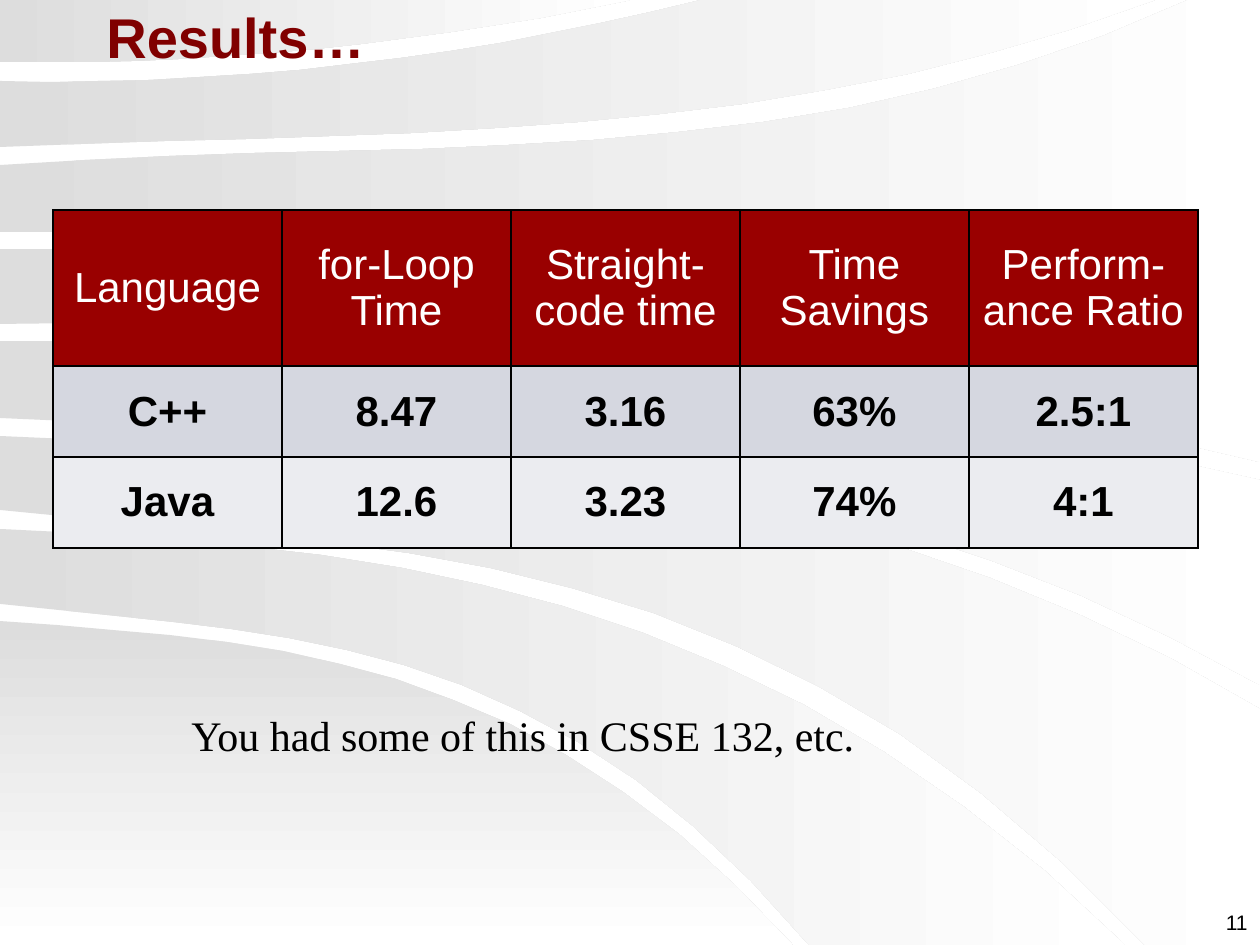
from math import prod
from typing import NamedTuple

from lxml import etree
from pptx import Presentation
from pptx.dml.color import RGBColor
from pptx.enum.text import MSO_ANCHOR, MSO_AUTO_SIZE, PP_ALIGN
from pptx.oxml.ns import qn
from pptx.util import Pt

PX = 914400 / 126
WIDE, HIGH = 1260, 945
STEPS = 14

GREY = RGBColor(0xDD, 0xDD, 0xDD)
WHITE = RGBColor(0xFF, 0xFF, 0xFF)
BLACK = RGBColor(0, 0, 0)
MAROON = RGBColor(0x80, 0, 0)
RED = RGBColor(0x99, 0, 0)
MIST = RGBColor(0xD5, 0xD7, 0xE0)
PALE = RGBColor(0xEB, 0xEC, 0xF0)

LEFT, MID, RIGHT = PP_ALIGN.LEFT, PP_ALIGN.CENTER, PP_ALIGN.RIGHT
TOP, CENTRE, BOTTOM = MSO_ANCHOR.TOP, MSO_ANCHOR.MIDDLE, MSO_ANCHOR.BOTTOM
FIT = MSO_AUTO_SIZE.SHAPE_TO_FIT_TEXT

Edge = list[tuple[int, int]]


class Band(NamedTuple):
    """Grey sweep between two curved edges, joined at the right by a corner."""
    upper: Edge
    lower: Edge
    corner: Edge = []
    angle: int = 0


class Style(NamedTuple):
    font: str
    size: int
    color: RGBColor
    bold: bool = False
    align: PP_ALIGN = LEFT


class Label(NamedTuple):
    text: str
    box: tuple[int, int, int, int]
    style: Style
    anchor: MSO_ANCHOR = TOP
    foot: int = 6
    wrap: bool = True


class Row(NamedTuple):
    cells: list[str]
    height: int
    fill: RGBColor
    style: Style


BANDS = [
    Band([(0, 621), (276, 650), (583, 765), (793, HIGH)], [(0, HIGH)],
         angle=270),
    Band([(0, 529), (422, 572), (764, 685), (1125, HIGH)],
         [(0, 604), (338, 648), (620, 769), (809, HIGH)]),
    Band([(0, 436), (484, 466), (930, 557), (WIDE, 709)],
         [(0, 510), (454, 561), (854, 706), (1145, HIGH)], [(WIDE, HIGH)]),
    Band([(0, 341), (604, 370), (WIDE, 480)],
         [(0, 418), (512, 452), (936, 541), (WIDE, 685)]),
    Band([(0, 249), (WIDE, 249)], [(0, 324), (696, 360), (WIDE, 462)]),
    Band([(0, 165), (469, 147), (925, 91), (1188, 0)],
         [(0, 232), (WIDE, 232)], [(WIDE, 0)]),
    Band([(0, 81), (336, 66), (701, 0)],
         [(0, 147), (430, 132), (816, 92), (1155, 0)]),
    Band([(0, 0)], [(0, 62), (255, 54), (631, 0)]),
]

HEAD = Style("Arial", 24, WHITE, align=MID)
BODY = Style("Arial", 24, BLACK, True, MID)
ROWS = [
    Row(["Language", "for-Loop Time", "Straight-code time", "Time Savings",
         "Perform-ance Ratio"], 156, RED, HEAD),
    Row(["C++", "8.47", "3.16", "63%", "2.5:1"], 91, MIST, BODY),
    Row(["Java", "12.6", "3.23", "74%", "4:1"], 91, PALE, BODY),
]
COL = 229

LABELS = [
    Label("11", (998, 903, 262, 53), Style("Arial", 12, BLACK, align=RIGHT)),
    Label("Results…", (94, 10, 1071, 73), Style("Arial", 32, MAROON, True),
          BOTTOM, 13),
    Label("You had some of this in CSSE 132, etc.", (179, 703, 694, 63),
          Style("Times New Roman", 24, BLACK), wrap=False),
]


def emu(px: int) -> int:
    return round(px * PX)


def write(frame, text: str, style: Style) -> None:
    frame.text = text
    para = frame.paragraphs[0]
    para.alignment = style.align
    font = para.runs[0].font
    font.name, font.size, font.bold = style.font, Pt(style.size), style.bold
    font.color.rgb = style.color


def curve(edge: Edge) -> Edge:
    """Sample the polynomial that runs through the points of an edge."""
    if len(edge) < 3:
        return edge

    def height(x: float) -> float:
        return sum(y * prod((x - b) / (a - b) for b, _ in edge if b != a)
                   for a, y in edge)

    end = edge[-1][0]
    places = [end * step / STEPS for step in range(STEPS + 1)]
    return [(round(x), round(height(x))) for x in places]


def draw_band(shapes, band: Band) -> None:
    start, *rest = curve(band.upper) + band.corner + curve(band.lower)[::-1]
    build = shapes.build_freeform(*start, scale=PX)
    build.add_line_segments(rest, close=True)
    shape = build.convert_to_shape()
    shape.shadow.inherit = False
    shape.line.fill.background()
    shape.fill.gradient()
    shape.fill.gradient_angle = band.angle
    for stop, color in zip(shape.fill.gradient_stops, (GREY, WHITE)):
        stop.color.rgb = color


def draw_label(shapes, label: Label) -> None:
    frame = shapes.add_textbox(*map(emu, label.box)).text_frame
    frame.word_wrap = label.wrap
    if not label.wrap:
        frame.auto_size = FIT
    frame.vertical_anchor = label.anchor
    frame.margin_bottom = emu(label.foot)
    write(frame, label.text, label.style)


def add_edges(cell) -> None:
    props = cell._tc.get_or_add_tcPr()
    for side in ("lnL", "lnR", "lnT", "lnB"):
        line = etree.SubElement(props, qn(f"a:{side}"), w=str(Pt(1)))
        fill = etree.SubElement(line, qn("a:solidFill"))
        etree.SubElement(fill, qn("a:srgbClr"), val=str(BLACK))


def draw_table(shapes, left: int, top: int, rows: list[Row]) -> None:
    count = len(rows[0].cells)
    high = sum(row.height for row in rows)
    box = map(emu, (left, top, COL * count, high))
    table = shapes.add_table(len(rows), count, *box).table
    for column in table.columns:
        column.width = emu(COL)
    for line, row in zip(table.rows, rows):
        line.height = emu(row.height)
        for cell, text in zip(line.cells, row.cells):
            add_edges(cell)
            cell.fill.solid()
            cell.fill.fore_color.rgb = row.fill
            cell.vertical_anchor = CENTRE
            write(cell.text_frame, text, row.style)


def main() -> None:
    deck = Presentation()
    deck.slide_width, deck.slide_height = emu(WIDE), emu(HIGH)
    shapes = deck.slides.add_slide(deck.slide_layouts[6]).shapes
    for band in BANDS:
        draw_band(shapes, band)
    number, title, note = LABELS
    draw_label(shapes, number)
    draw_label(shapes, title)
    draw_table(shapes, 53, 210, ROWS)
    draw_label(shapes, note)
    deck.save("out.pptx")


if __name__ == "__main__":
    main()
